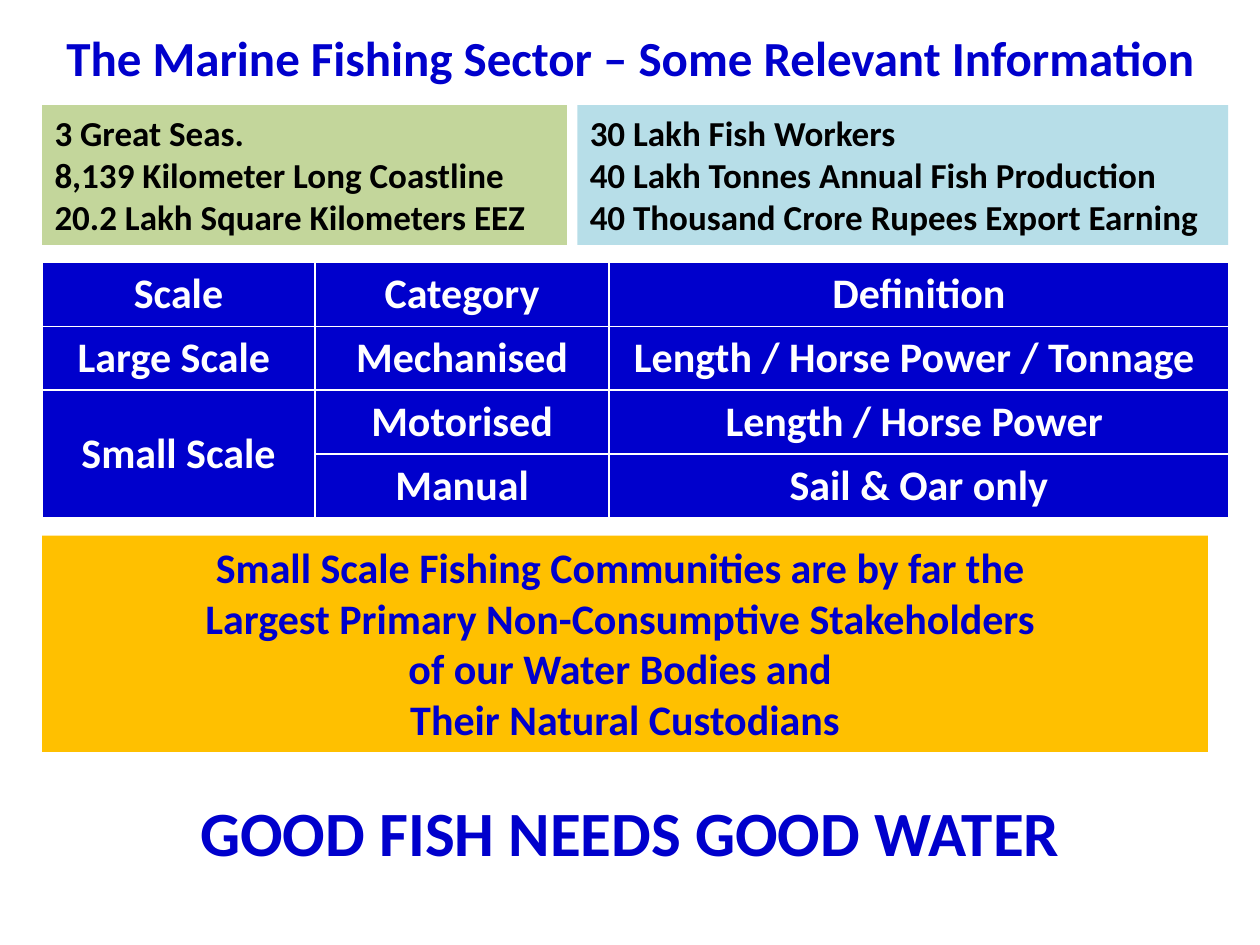
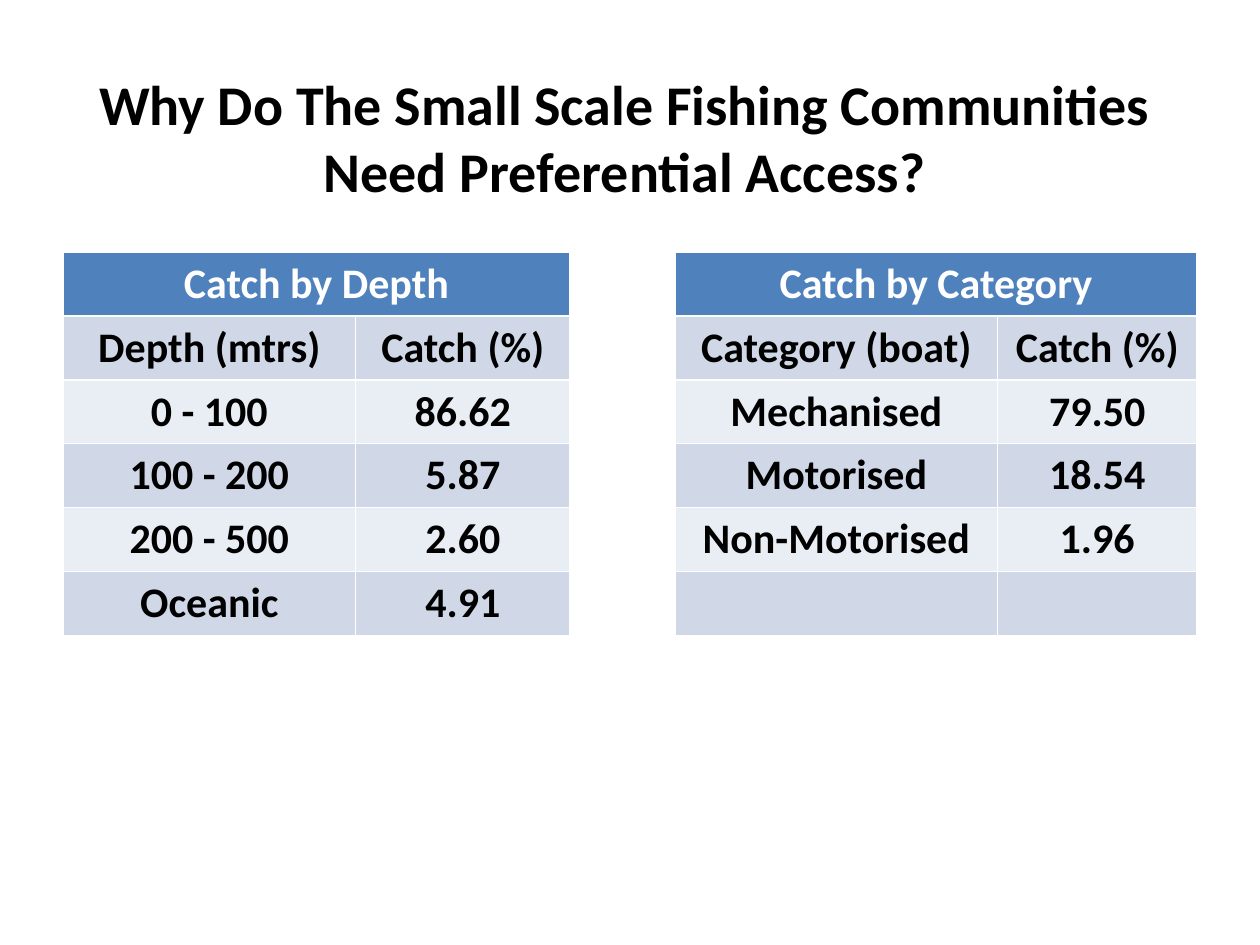
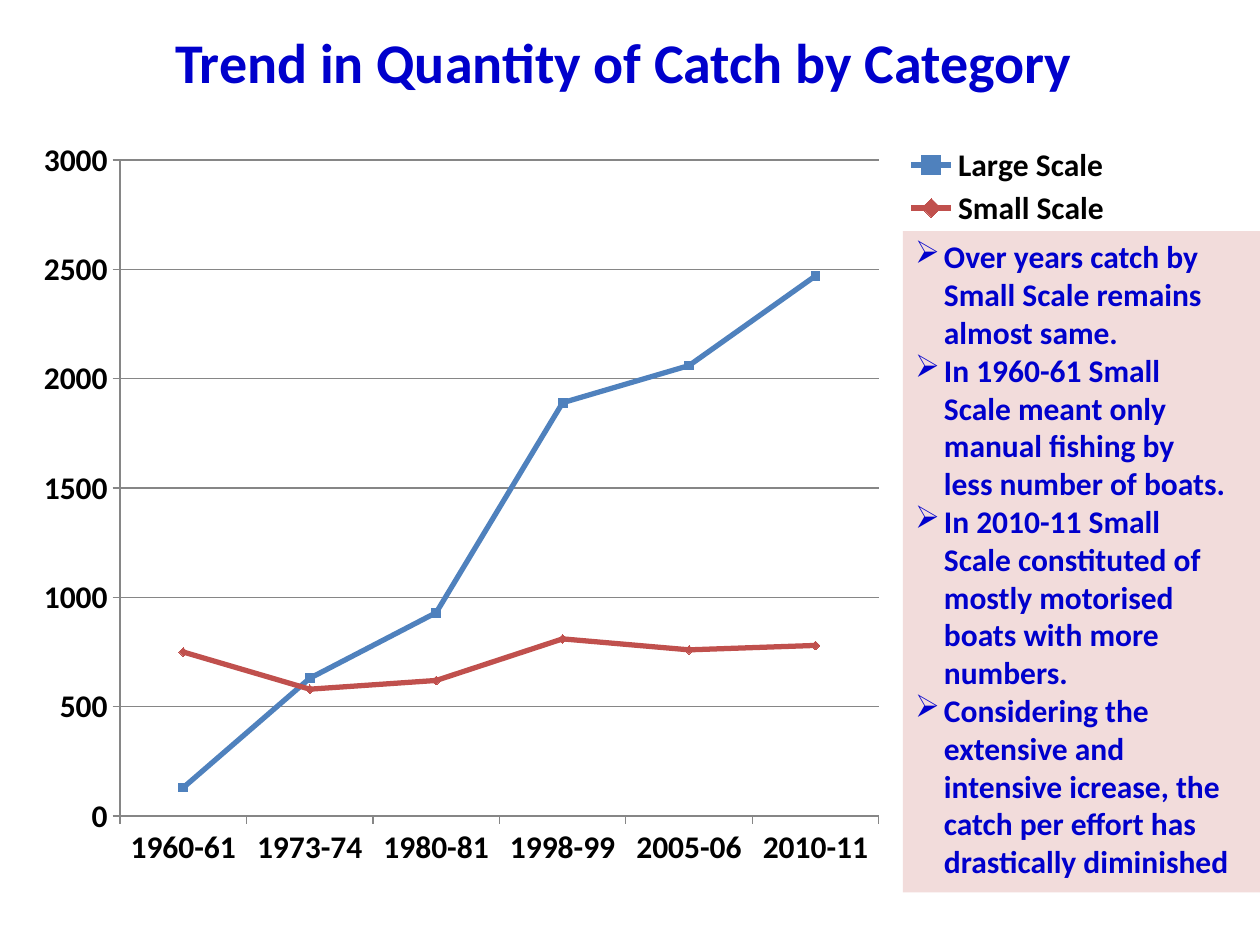
from collections import namedtuple

from lxml import etree
from pptx import Presentation
from pptx.chart.data import CategoryChartData
from pptx.dml.color import RGBColor
from pptx.enum.chart import XL_CHART_TYPE, XL_LEGEND_POSITION, XL_MARKER_STYLE, XL_TICK_MARK
from pptx.enum.shapes import MSO_SHAPE
from pptx.enum.text import MSO_ANCHOR, MSO_AUTO_SIZE, PP_ALIGN
from pptx.oxml.ns import qn
from pptx.util import Cm, Pt

LEFT, CENTER = PP_ALIGN.LEFT, PP_ALIGN.CENTER
TOP, MIDDLE = MSO_ANCHOR.TOP, MSO_ANCHOR.MIDDLE
NO_AUTOFIT = MSO_AUTO_SIZE.NONE
RECTANGLE = MSO_SHAPE.RECTANGLE
LINE_MARKERS = XL_CHART_TYPE.LINE_MARKERS
LEGEND_RIGHT = XL_LEGEND_POSITION.RIGHT
TICK_OUTSIDE = XL_TICK_MARK.OUTSIDE
SQUARE, DIAMOND = XL_MARKER_STYLE.SQUARE, XL_MARKER_STYLE.DIAMOND

FONT = "Calibri"
BLUE, BLACK, WHITE = "0000CC", "000000", "FFFFFF"
GREEN, AQUA, AMBER, PINK = "C3D69B", "B7DEE8", "FFC000", "F2DCDB"
HEADER_BLUE, BAND_DARK, BAND_LIGHT = "4F81BD", "D0D8E8", "E9EDF4"
SERIES_RED, GRID_GRAY = "C0504D", "868686"
TITLE_ONLY = 5
ROW_HEIGHT = 1.27

Box = namedtuple("Box", "left top width height")

SEA_FACTS = ["3 Great Seas.", "8,139 Kilometer Long Coastline", "20.2 Lakh Square Kilometers EEZ"]
WORK_FACTS = [
    "30 Lakh Fish Workers",
    "40 Lakh Tonnes Annual Fish Production",
    "40 Thousand Crore Rupees Export Earning",
]
SCALE_ROWS = [
    ["Scale", "Category", "Definition"],
    ["Large Scale ", "Mechanised", "Length / Horse Power / Tonnage "],
    ["Small Scale", "Motorised", "Length / Horse Power "],
    ["", "Manual", "Sail & Oar only"],
]
CUSTODIANS = [
    "Small Scale Fishing Communities are by far the ",
    "Largest Primary Non-Consumptive Stakeholders ",
    "of our Water Bodies and ",
    "Their Natural Custodians",
]
CATCH_ROWS = [
    ["Catch by Depth", "", "", "Catch by Category", ""],
    ["Depth (mtrs)", "Catch (%)", "", "Category (boat)", "Catch (%)"],
    ["0 - 100", "86.62", "", "Mechanised", "79.50"],
    ["100 - 200", "5.87", "", "Motorised", "18.54"],
    ["200 - 500", "2.60", "", "Non-Motorised", "1.96"],
    ["Oceanic", "4.91", "", "", ""],
]
YEARS = ["1960-61", "1973-74", "1980-81", "1998-99", "2005-06", "2010-11"]
CATCH_SERIES = [
    ("Large Scale", [130, 630, 930, 1890, 2060, 2470], HEADER_BLUE, SQUARE),
    ("Small Scale", [750, 580, 620, 810, 760, 780], SERIES_RED, DIAMOND),
]
OBSERVATIONS = [
    "Over years catch by\vSmall Scale remains\valmost same.",
    "In 1960-61 Small\vScale meant only\vmanual fishing by\vless number of boats.",
    "In 2010-11 Small\vScale constituted of\vmostly motorised\vboats with more\vnumbers.",
    "Considering the\vextensive and\vintensive icrease, the\vcatch per effort has\vdrastically diminished",
]


def rgb(color):
    """Turn a hex string into a colour."""
    return RGBColor.from_string(color)


def apply_format(target, values):
    """Set each attribute named in a dict."""
    for name, value in values.items():
        setattr(target, name, value)


def format_font(font, size, color):
    """Give a font the deck's bold face with a size and colour."""
    apply_format(font, {"name": FONT, "size": Pt(size), "bold": True})
    font.color.rgb = rgb(color)


def fill_solid(target, color):
    """Fill a shape, cell or marker with one colour."""
    target.fill.solid()
    target.fill.fore_color.rgb = rgb(color)


def place(shape, box):
    """Move and size a shape to a box in centimetres."""
    apply_format(shape, {name: Cm(value) for name, value in box._asdict().items()})


def write_lines(text_frame, lines, size, color, alignment=CENTER):
    """Write one formatted paragraph for each line."""
    for index, line in enumerate(lines):
        paragraph = text_frame.add_paragraph() if index else text_frame.paragraphs[0]
        paragraph.text = line
        paragraph.alignment = alignment
        for run in paragraph.runs:
            format_font(run.font, size, color)


def add_titled_slide(presentation, title, box, size, color):
    """Add a title-only slide and set its title."""
    slide = presentation.slides.add_slide(presentation.slide_layouts[TITLE_ONLY])
    place(slide.shapes.title, box)
    text_frame = slide.shapes.title.text_frame
    apply_format(text_frame, {"auto_size": NO_AUTOFIT, "vertical_anchor": TOP, "word_wrap": True})
    write_lines(text_frame, [title], size, color)
    return slide


def add_panel(slide, box, lines, size, color, fill=None, alignment=CENTER):
    """Add a rectangle of text, filled if a colour is given."""
    panel = slide.shapes.add_shape(RECTANGLE, *map(Cm, box))
    panel.shadow.inherit = False
    panel.line.fill.background()
    if fill:
        fill_solid(panel, fill)
    else:
        panel.fill.background()
    apply_format(panel.text_frame, {"word_wrap": True, "vertical_anchor": TOP})
    write_lines(panel.text_frame, lines, size, color, alignment)
    return panel


def add_bullets(panel, character, indent):
    """Give each paragraph of a panel a hanging bullet."""
    for paragraph in panel.text_frame.paragraphs:
        properties = paragraph._p.get_or_add_pPr()
        properties.set("marL", str(Cm(indent)))
        properties.set("indent", str(-Cm(indent)))
        etree.SubElement(properties, qn("a:buChar")).set("char", character)


def add_grid(slide, left, top, widths, rows, merges, cell_colors):
    """Add a table whose cell colours follow a rule by row and column."""
    box = Box(left, top, sum(widths), ROW_HEIGHT * len(rows))
    table = slide.shapes.add_table(len(rows), len(widths), *map(Cm, box)).table
    for column, width in zip(table.columns, widths):
        column.width = Cm(width)
    for start, end in merges:
        table.cell(*start).merge(table.cell(*end))
    for row_index, row in enumerate(rows):
        for column_index, text in enumerate(row):
            cell = table.cell(row_index, column_index)
            fill, color = cell_colors(row_index, column_index)
            fill_solid(cell, fill)
            cell.vertical_anchor = MIDDLE
            write_lines(cell.text_frame, [text], 24, color)


def scale_colors(row, column):
    """Return fill and text colour for the scale table."""
    return BLUE, WHITE


def catch_colors(row, column):
    """Return fill and text colour for the catch table."""
    if column == 2:
        return WHITE, BLACK
    if row == 0:
        return HEADER_BLUE, WHITE
    return (BAND_DARK if row % 2 else BAND_LIGHT), BLACK


def set_layout(parent, index, box, inner=False):
    """Fix a chart part at fractions of the chart's size."""
    for old_layout in parent.findall(qn("c:layout")):
        parent.remove(old_layout)
    layout = etree.Element(qn("c:layout"))
    manual = etree.SubElement(layout, qn("c:manualLayout"))
    settings = [("layoutTarget", "inner")] if inner else []
    settings += [("xMode", "edge"), ("yMode", "edge"), *zip("xywh", box)]
    for name, value in settings:
        etree.SubElement(manual, qn(f"c:{name}")).set("val", str(value))
    parent.insert(index, layout)


def add_catch_chart(slide, box):
    """Add the line chart of catch by scale."""
    data = CategoryChartData(number_format="0")
    data.categories = YEARS
    for name, values, *_ in CATCH_SERIES:
        data.add_series(name, values)
    chart = slide.shapes.add_chart(LINE_MARKERS, *map(Cm, box), data).chart
    apply_format(chart, {"has_title": False, "has_legend": True})
    format_font(chart.font, 18, BLACK)
    apply_format(chart.legend, {"position": LEGEND_RIGHT, "include_in_layout": False})
    format_font(chart.legend.font, 18, BLACK)
    apply_format(chart.value_axis, {"minimum_scale": 0, "maximum_scale": 3000, "major_unit": 500,
                                    "has_major_gridlines": True})
    for axis in (chart.category_axis, chart.value_axis):
        axis.major_tick_mark = TICK_OUTSIDE
        format_font(axis.tick_labels.font, 18, BLACK)
        axis.format.line.color.rgb = rgb(GRID_GRAY)
    chart.value_axis.major_gridlines.format.line.color.rgb = rgb(GRID_GRAY)
    chart.plots[0].vary_by_categories = False
    for series, (_, _, color, marker_style) in zip(chart.plots[0].series, CATCH_SERIES):
        series.smooth = False
        series.format.line.width = Pt(3)
        series.format.line.color.rgb = rgb(color)
        apply_format(series.marker, {"style": marker_style, "size": 5})
        fill_solid(series.marker.format, color)
        series.marker.format.line.color.rgb = rgb(color)
    plot_area = chart._chartSpace.chart.plotArea
    set_layout(plot_area, 0, Box(0.09, 0.045, 0.688, 0.868), inner=True)
    set_layout(chart.legend._element, 1, Box(0.8, 0.02, 0.19, 0.12))


def build_sector_slide(presentation):
    """Build the overview of the marine fishing sector."""
    title = "The Marine Fishing Sector – Some Relevant Information"
    slide = add_titled_slide(presentation, title, Box(0.64, 0.42, 24.13, 1.45), 28, BLUE)
    add_panel(slide, Box(0.85, 2.12, 10.58, 2.82), SEA_FACTS, 20, BLACK, GREEN, LEFT)
    add_panel(slide, Box(11.64, 2.12, 13.12, 2.82), WORK_FACTS, 20, BLACK, AQUA, LEFT)
    add_grid(slide, 0.85, 5.29, [5.5, 5.93, 12.49], SCALE_ROWS, [((2, 0), (3, 0))], scale_colors)
    add_panel(slide, Box(0.85, 10.8, 23.5, 4.36), CUSTODIANS, 24, BLUE, AMBER)
    add_panel(slide, Box(1.27, 15.88, 22.86, 1.8), ["GOOD FISH NEEDS GOOD WATER"], 36, BLUE)


def build_access_slide(presentation):
    """Build the catch shares by depth and by category."""
    title = "Why Do The Small Scale Fishing Communities Need Preferential Access?"
    slide = add_titled_slide(presentation, title, Box(1.48, 1.27, 22.23, 3), 32, BLACK)
    merges = [((0, 0), (0, 1)), ((0, 3), (0, 4))]
    add_grid(slide, 1.27, 5.08, [5.9, 4.32, 2.12, 6.5, 4.02], CATCH_ROWS, merges, catch_colors)


def build_trend_slide(presentation):
    """Build the catch trend chart with its observations."""
    title = "Trend in Quantity of Catch by Category "
    slide = add_titled_slide(presentation, title, Box(0, 0.42, 25.4, 1.63), 32, BLUE)
    add_catch_chart(slide, Box(0.42, 2.54, 22.23, 15.24))
    panel = add_panel(slide, Box(18.2, 4.66, 7.2, 13.33), OBSERVATIONS, 18, BLUE, PINK, LEFT)
    add_bullets(panel, "➢", 0.58)


def main():
    """Build and save the presentation."""
    presentation = Presentation()
    apply_format(presentation, {"slide_width": Cm(25.4), "slide_height": Cm(19.05)})
    for build_slide in (build_sector_slide, build_access_slide, build_trend_slide):
        build_slide(presentation)
    presentation.save("out.pptx")


if __name__ == "__main__":
    main()
